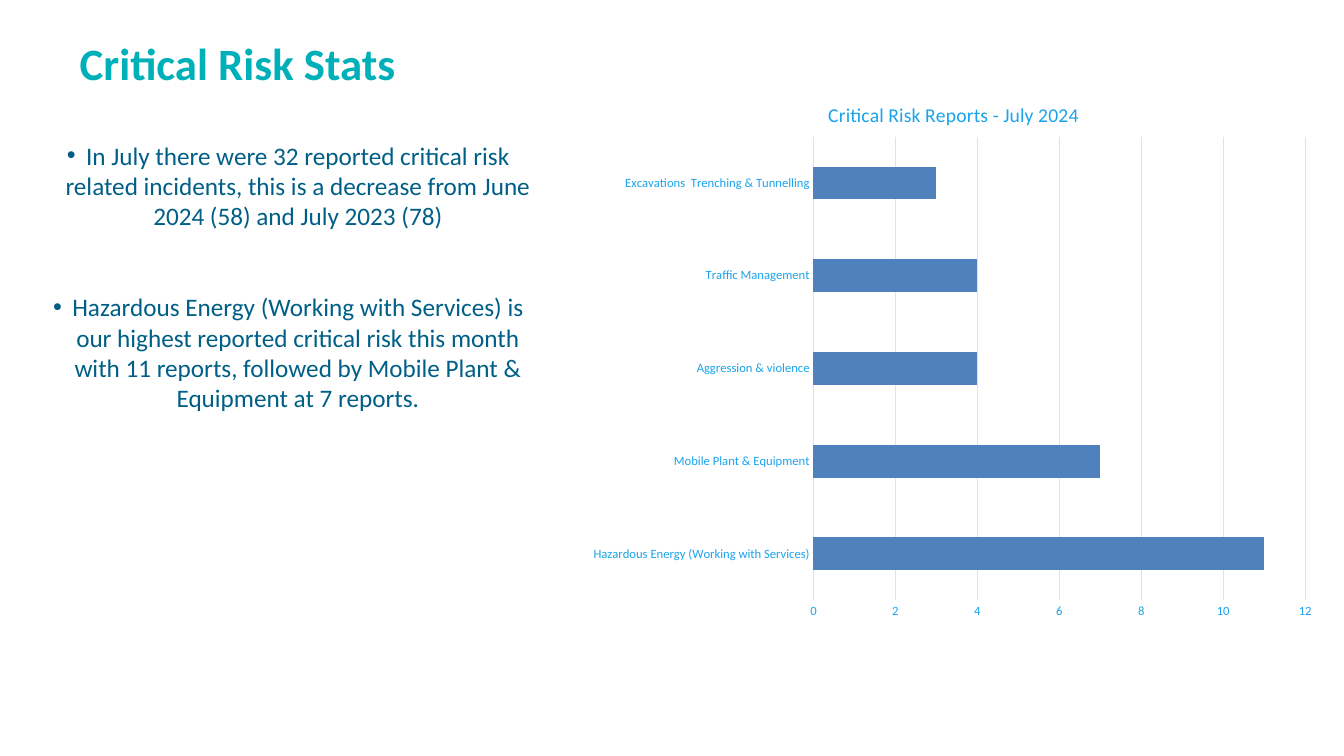
from dataclasses import dataclass

from lxml.etree import SubElement
from pptx import Presentation
from pptx.chart.data import CategoryChartData
from pptx.dml.color import RGBColor
from pptx.enum.chart import XL_CHART_TYPE, XL_TICK_MARK
from pptx.enum.text import MSO_ANCHOR, MSO_AUTO_SIZE, PP_ALIGN
from pptx.oxml import parse_xml
from pptx.oxml.ns import nsdecls, qn
from pptx.util import Inches, Pt


@dataclass(frozen=True)
class Theme:
    font: str = "Calibri"
    teal: RGBColor = RGBColor(0x00, 0xB0, 0xB9)
    navy: RGBColor = RGBColor(0x00, 0x5F, 0x86)
    sky: RGBColor = RGBColor(0x1A, 0xA3, 0xEB)
    pale: RGBColor = RGBColor(0xCA, 0xEA, 0xFA)
    bar: RGBColor = RGBColor(0x4F, 0x81, 0xBD)
    title_size: float = 32
    body_size: float = 18
    chart_title_size: float = 14
    axis_size: float = 9


@dataclass(frozen=True)
class Bullet:
    text: str
    space_before: float = 0


@dataclass(frozen=True)
class RiskCount:
    risk: str
    reports: int


THEME = Theme()
BULLET_INDENT = 0.19

BULLETS = [
    Bullet("In July there were 32 reported critical risk related incidents, "
           "this is a decrease from June 2024 (58) and July 2023 (78)"),
    Bullet("Hazardous Energy (Working with Services) is our highest reported "
           "critical risk this month with 11 reports, followed by Mobile Plant & "
           "Equipment at 7 reports.", space_before=43.5),
]

RISK_COUNTS = [
    RiskCount("Hazardous Energy (Working with Services)", 11),
    RiskCount("Mobile Plant & Equipment", 7),
    RiskCount("Aggression & violence", 4),
    RiskCount("Traffic Management", 4),
    RiskCount("Excavations  Trenching & Tunnelling", 3),
]


def format_font(font, size: float, color: RGBColor, bold: bool = False) -> None:
    font.name = THEME.font
    font.size = Pt(size)
    font.bold = bold
    font.color.rgb = color


def write_text(paragraph, text: str, *, size: float, color: RGBColor,
               bold: bool = False, align=PP_ALIGN.LEFT,
               space_before: float = 0, bullet: bool = False) -> None:
    paragraph.alignment = align
    paragraph.space_before = Pt(space_before)
    if bullet:
        properties = paragraph._p.get_or_add_pPr()
        properties.set("marL", str(Inches(BULLET_INDENT)))
        properties.set("indent", str(-Inches(BULLET_INDENT)))
        SubElement(properties, qn("a:buFont")).set("typeface", "Arial")
        SubElement(properties, qn("a:buChar")).set("char", "•")
    run = paragraph.add_run()
    run.text = text
    format_font(run.font, size, color, bold)


def prepare_frame(shape):
    frame = shape.text_frame
    frame.word_wrap = True
    frame.auto_size = MSO_AUTO_SIZE.NONE
    frame.vertical_anchor = MSO_ANCHOR.TOP
    return frame


def add_title(slide, text: str) -> None:
    title = slide.shapes.title
    title.left, title.top = Inches(0.69), Inches(0.3)
    title.width, title.height = Inches(11.95), Inches(0.93)
    write_text(prepare_frame(title).paragraphs[0], text, size=THEME.title_size,
               color=THEME.teal, bold=True)


def add_bullets(slide, bullets: list[Bullet]) -> None:
    box = slide.shapes.add_textbox(Inches(0.32), Inches(1.34), Inches(5.08), Inches(5.03))
    frame = prepare_frame(box)
    for index, bullet in enumerate(bullets):
        paragraph = frame.add_paragraph() if index else frame.paragraphs[0]
        write_text(paragraph, bullet.text, size=THEME.body_size, color=THEME.navy,
                   align=PP_ALIGN.CENTER, space_before=bullet.space_before, bullet=True)


def manual_layout(**fractions: float):
    """Build a chart layout from fractions of the chart's size."""
    target = '<c:layoutTarget val="inner"/>' if "w" in fractions else ""
    modes = "".join(f'<c:{key}Mode val="edge"/>' for key in ("x", "y"))
    values = "".join(f'<c:{key} val="{value}"/>' for key, value in fractions.items())
    return parse_xml(f'<c:layout {nsdecls("c")}><c:manualLayout>{target}{modes}{values}'
                     "</c:manualLayout></c:layout>")


def replace_layout(element, layout, position: int) -> None:
    for existing in element.findall(qn("c:layout")):
        element.remove(existing)
    element.insert(position, layout)


def add_risk_chart(slide, counts: list[RiskCount]) -> None:
    data = CategoryChartData()
    data.categories = [count.risk for count in counts]
    data.add_series("Series 1", [count.reports for count in counts])
    chart = slide.shapes.add_chart(XL_CHART_TYPE.BAR_CLUSTERED, Inches(5.74), Inches(0.75),
                                   Inches(7.39), Inches(5.51), data).chart
    format_font(chart.font, THEME.axis_size, THEME.sky)
    chart.has_legend = False

    # Title and plot area
    chart.has_title = True
    write_text(chart.chart_title.text_frame.paragraphs[0],
               "Critical Risk Reports - July 2024", size=THEME.chart_title_size,
               color=THEME.sky, align=PP_ALIGN.CENTER)
    chart.chart_title.include_in_layout = False
    replace_layout(chart.chart_title._element, manual_layout(x=0.33, y=0.04), 1)
    replace_layout(chart._chartSpace.chart.plotArea,
                   manual_layout(x=0.315, y=0.11, w=0.66, h=0.835), 0)

    # Bars
    plot = chart.plots[0]
    plot.gap_width = 182
    plot.vary_by_categories = False
    fill = plot.series[0].format.fill
    fill.solid()
    fill.fore_color.rgb = THEME.bar

    # Axes
    category_axis, value_axis = chart.category_axis, chart.value_axis
    for axis in (category_axis, value_axis):
        axis.major_tick_mark = axis.minor_tick_mark = XL_TICK_MARK.NONE
        format_font(axis.tick_labels.font, THEME.axis_size, THEME.sky)
    value_axis.minimum_scale, value_axis.maximum_scale = 0, 12
    value_axis.major_unit = 2
    value_axis.has_major_gridlines = True
    value_axis.format.line.fill.background()
    for line in (category_axis.format.line, value_axis.major_gridlines.format.line):
        line.width = Pt(0.75)
        line.color.rgb = THEME.pale


def main() -> None:
    presentation = Presentation()
    presentation.slide_width, presentation.slide_height = Inches(13.33), Inches(7.5)
    slide = presentation.slides.add_slide(presentation.slide_layouts.get_by_name("Title Only"))
    add_title(slide, "Critical Risk Stats")
    add_bullets(slide, BULLETS)
    add_risk_chart(slide, RISK_COUNTS)
    presentation.save("out.pptx")


if __name__ == "__main__":
    main()
